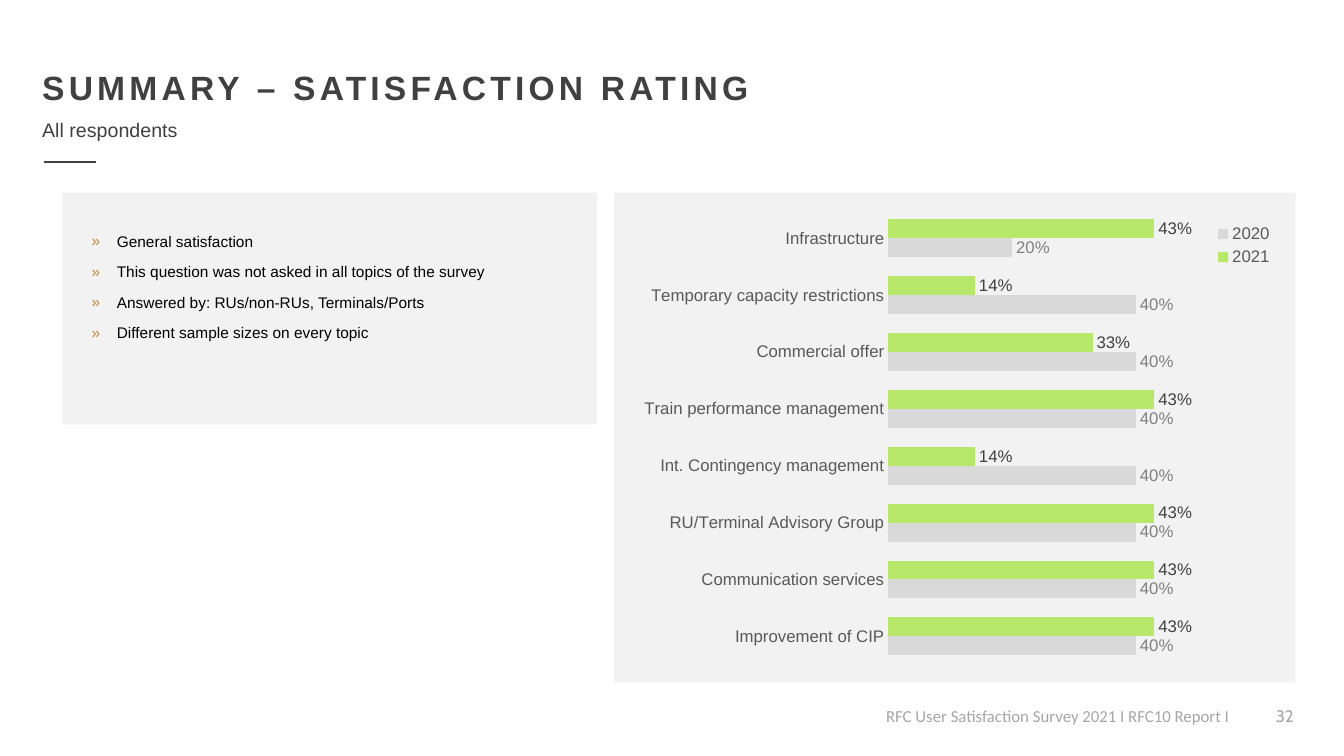
from lxml import etree
from pptx import Presentation
from pptx.chart.data import CategoryChartData
from pptx.dml.color import RGBColor
from pptx.enum.chart import XL_CHART_TYPE, XL_LABEL_POSITION, XL_LEGEND_POSITION, XL_TICK_MARK
from pptx.enum.shapes import MSO_CONNECTOR, MSO_SHAPE
from pptx.enum.text import PP_ALIGN
from pptx.oxml.ns import qn
from pptx.util import Inches, Pt

BAR_CLUSTERED = XL_CHART_TYPE.BAR_CLUSTERED
OUTSIDE_END = XL_LABEL_POSITION.OUTSIDE_END
LEGEND_RIGHT = XL_LEGEND_POSITION.RIGHT
NO_TICKS = XL_TICK_MARK.NONE
STRAIGHT = MSO_CONNECTOR.STRAIGHT
RECTANGLE = MSO_SHAPE.RECTANGLE
LEFT, RIGHT = PP_ALIGN.LEFT, PP_ALIGN.RIGHT

WIDTH, HEIGHT = Inches(13.33), Inches(7.5)
DARK, PANEL, FOOTER_GREY = "404040", "F2F2F2", "A6A6A6"
PANEL_TOP = 25.47

TOPICS = [
    "General satisfaction",
    "This question was not asked in all topics of the survey",
    "Answered by: RUs/non-RUs, Terminals/Ports",
    "Different sample sizes on every topic",
]
RATINGS = {
    "Infrastructure": (0.43, 0.2),
    "Temporary capacity restrictions": (0.14, 0.4),
    "Commercial offer": (0.33, 0.4),
    "Train performance management": (0.43, 0.4),
    "Int. Contingency management": (0.14, 0.4),
    "RU/Terminal Advisory Group": (0.43, 0.4),
    "Communication services": (0.43, 0.4),
    "Improvement of CIP": (0.43, 0.4),
}
YEARS = [("2021", "B8E86A", DARK), ("2020", "D9D9D9", "808080")]


def color(value):
    return RGBColor.from_string(value)


def across(percent):
    return round(WIDTH * percent / 100)


def down(percent):
    return round(HEIGHT * percent / 100)


def box(left, top, width, height):
    return across(left), down(top), across(width), down(height)


def set_font(font, size, value, name="Arial", bold=False):
    font.size = Pt(size)
    font.name = name
    font.bold = bold
    font.color.rgb = color(value)


def add_bullet(paragraph):
    paragraph.line_spacing = 0.9
    paragraph.space_before = Pt(10)
    properties = paragraph._p.get_or_add_pPr()
    properties.set("marL", str(Inches(0.25)))
    properties.set("indent", str(-Inches(0.25)))
    bullet_color = etree.SubElement(properties, qn("a:buClr"))
    etree.SubElement(bullet_color, qn("a:srgbClr"), val="BF873D")
    etree.SubElement(properties, qn("a:buFont"), typeface="Arial")
    etree.SubElement(properties, qn("a:buChar"), char="»")


def add_text(slide, lines, area, size, value, name="Arial", bold=False,
             align=LEFT, wrap=True, spacing=0, bullets=False):
    frame = slide.shapes.add_textbox(*box(*area)).text_frame
    frame.word_wrap = wrap
    for index, line in enumerate(lines):
        paragraph = frame.add_paragraph() if index else frame.paragraphs[0]
        paragraph.alignment = align
        if bullets:
            add_bullet(paragraph)
        run = paragraph.add_run()
        run.text = line
        set_font(run.font, size, value, name, bold)
        if spacing:
            run.font._element.set("spc", str(spacing * 100))


def add_panel(slide, area):
    shape = slide.shapes.add_shape(RECTANGLE, *box(*area))
    shape.shadow.inherit = False
    shape.fill.solid()
    shape.fill.fore_color.rgb = color(PANEL)
    shape.line.fill.background()


def add_rule(slide, start, end, top):
    rule = slide.shapes.add_connector(
        STRAIGHT, across(start), down(top), across(end), down(top))
    rule.line.color.rgb = color(DARK)
    rule.line.width = Pt(1.5)
    etree.SubElement(rule._element.spPr, qn("a:effectLst"))


def set_layout(parent, index, x, y, w, h, inner=False):
    for previous in parent.findall(qn("c:layout")):
        parent.remove(previous)
    layout = etree.Element(qn("c:layout"))
    manual = etree.SubElement(layout, qn("c:manualLayout"))
    if inner:
        etree.SubElement(manual, qn("c:layoutTarget"), val="inner")
    for tag in ("xMode", "yMode"):
        etree.SubElement(manual, qn("c:" + tag), val="edge")
    for tag, share in zip("xywh", (x, y, w, h)):
        etree.SubElement(manual, qn("c:" + tag), val=str(share))
    parent.insert(index, layout)


def style_series(series, fill, label_color):
    series.format.fill.solid()
    series.format.fill.fore_color.rgb = color(fill)
    labels = series.data_labels
    labels.show_value = True
    labels.position = OUTSIDE_END
    labels.number_format = "0%"
    labels.number_format_is_linked = False
    set_font(labels.font, 12, label_color)


def add_ratings_chart(slide, area):
    data = CategoryChartData(number_format="0%")
    data.categories = list(RATINGS)
    for (year, _, _), values in zip(YEARS, zip(*RATINGS.values())):
        data.add_series(year, values)
    chart = slide.shapes.add_chart(BAR_CLUSTERED, *box(*area), data).chart
    chart.has_title = False
    set_font(chart.font, 10, "000000")

    plot = chart.plots[0]
    plot.gap_width = 100
    plot.overlap = 0
    plot.vary_by_categories = False
    for series, (_, fill, label_color) in zip(plot.series, YEARS):
        style_series(series, fill, label_color)

    topics = chart.category_axis
    topics.reverse_order = True
    topics.major_tick_mark = NO_TICKS
    topics.format.line.fill.background()
    set_font(topics.tick_labels.font, 12, "595959")
    scale = chart.value_axis
    scale.minimum_scale, scale.maximum_scale = 0, 0.5
    scale.has_major_gridlines = False
    scale.visible = False

    chart.has_legend = True
    legend = chart.legend
    legend.position = LEGEND_RIGHT
    legend.include_in_layout = False
    set_font(legend.font, 12, "595959")
    set_layout(legend._element, 1, 0.89, 0.04, 0.1, 0.11)
    plot_area = chart._chartSpace.chart.plotArea
    set_layout(plot_area, 0, 0.4, 0.02, 0.47, 0.96, inner=True)


def main():
    presentation = Presentation()
    presentation.slide_width, presentation.slide_height = WIDTH, HEIGHT
    slide = presentation.slides.add_slide(presentation.slide_layouts[6])

    add_text(slide, ["32"], (92.35, 92.67, 4.65, 5.33), 12, FOOTER_GREY,
             name="Cabin", align=RIGHT)
    add_text(slide, ["RFC User Satisfaction Survey 2021 I RFC10 Report I"],
             (65.19, 92.67, 28.51, 4), 12, FOOTER_GREY, name="Calibri", wrap=False)
    add_panel(slide, (45.69, PANEL_TOP, 50.71, 64.8))
    add_rule(slide, 3.3, 7.13, 21.47)
    add_text(slide, ["SUMMARY – SATISFACTION RATING"], (2.4, 8.13, 87.55, 6.67),
             24, DARK, bold=True, spacing=3)
    add_text(slide, ["All respondents"], (2.4, 14.93, 11.63, 4.53), 14, DARK, wrap=False)
    add_ratings_chart(slide, (46.51, 26.53, 48.99, 62.67))
    add_panel(slide, (4.65, PANEL_TOP, 39.76, 30.67))
    add_text(slide, TOPICS, (6.08, 30.27, 37.13, 10.93), 11, "000000", bullets=True)

    presentation.save("out.pptx")


if __name__ == "__main__":
    main()
